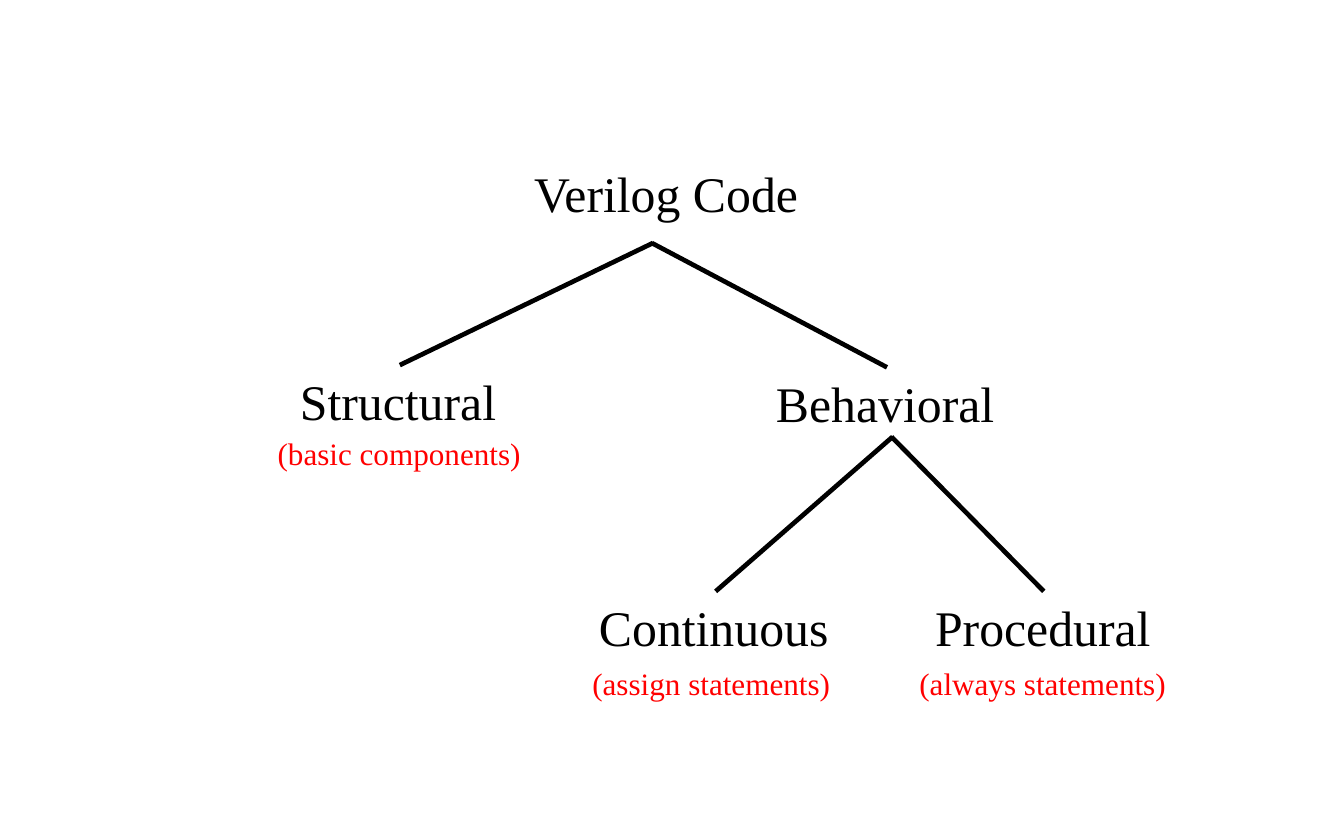
"""Build a slide with a tree of Verilog coding styles."""
from lxml import etree
from pptx import Presentation
from pptx.dml.color import RGBColor
from pptx.enum import shapes, text
from pptx.oxml import ns
from pptx.util import Inches, Pt

BLACK, RED = "000000", "FF0000"
LABELS = [
    ("Verilog Code", 4.67, 1.4, 2.58),
    ("Structural", 2.58, 3.26, 1.97),
    ("Behavioral", 6.83, 3.28, 2.17),
    ("Continuous", 5.25, 5.28, 2.27),
    ("Procedural", 8.25, 5.28, 2.15),
]
NOTES = [
    ("(assign statements)", 5.19, 5.88, 2.34),
    ("(basic components)", 2.38, 3.83, 2.39),
    ("(always statements)", 8.11, 5.88, 2.42),
]
BRANCHES = [
    ((5.83, 2.17), (3.57, 3.26)),
    ((5.82, 2.17), (7.92, 3.28)),
    ((7.97, 3.9), (6.39, 5.28)),
    ((7.96, 3.9), (9.32, 5.28)),
]


def rgb(value):
    """Turn a hex string into a colour."""
    return RGBColor.from_string(value)


def add_text(page, words, left, top, width, *, height=0.64, size=32, color=BLACK):
    """Add a one-line text box that fits its words."""
    box = page.shapes.add_textbox(
        Inches(left), Inches(top), Inches(width), Inches(height))
    frame = box.text_frame
    frame.word_wrap = False
    frame.auto_size = text.MSO_AUTO_SIZE.SHAPE_TO_FIT_TEXT
    span = frame.paragraphs[0].add_run()
    span.text = words
    span.font.name = "Times New Roman"
    span.font.size = Pt(size)
    span.font.color.rgb = rgb(color)


def add_branch(page, parent, child):
    """Add a straight line from a parent label to a child label."""
    points = [Inches(value) for value in (*parent, *child)]
    branch = page.shapes.add_connector(shapes.MSO_CONNECTOR.STRAIGHT, *points)
    branch.line.color.rgb = rgb(BLACK)
    branch.line.width = Pt(3)
    etree.SubElement(branch.element.spPr, ns.qn("a:effectLst"))


def main():
    """Build and save the deck."""
    deck = Presentation()
    deck.slide_width, deck.slide_height = Inches(12), Inches(7.5)
    page = deck.slides.add_slide(deck.slide_layouts[6])
    for label in LABELS:
        add_text(page, *label)
    for parent, child in BRANCHES:
        add_branch(page, parent, child)
    for note in NOTES:
        add_text(page, *note, height=0.44, size=20, color=RED)
    deck.save("out.pptx")


if __name__ == "__main__":
    main()
